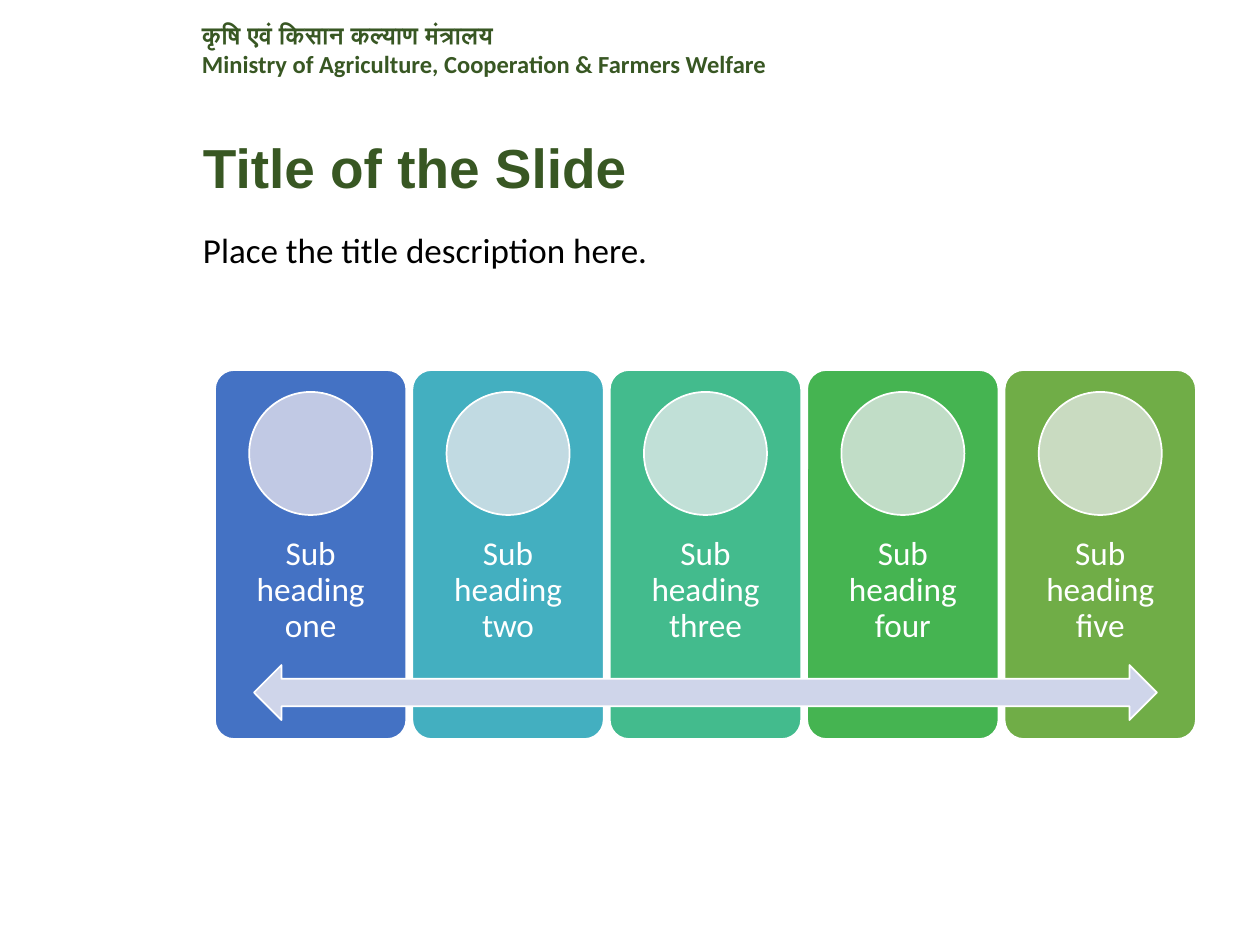
import pptx
import pptx.util
from pptx.dml.color import RGBColor
from pptx.enum.shapes import MSO_SHAPE
from pptx.enum.text import MSO_ANCHOR, PP_ALIGN

PX = 914400 / 126

DARK_GREEN = RGBColor(0x38, 0x57, 0x23)
BLACK = RGBColor(0, 0, 0)
WHITE = RGBColor(0xFF, 0xFF, 0xFF)
ARROW_FILL = RGBColor(0xCF, 0xD5, 0xEA)

# Heading, card colour, circle colour
CARDS = [
    ("Sub heading one", RGBColor(0x44, 0x72, 0xC4), RGBColor(0xC1, 0xC9, 0xE4)),
    ("Sub heading two", RGBColor(0x43, 0xAF, 0xC0), RGBColor(0xC1, 0xDA, 0xE2)),
    ("Sub heading three", RGBColor(0x43, 0xBB, 0x8D), RGBColor(0xC1, 0xE0, 0xD7)),
    ("Sub heading four", RGBColor(0x45, 0xB4, 0x51), RGBColor(0xC1, 0xDD, 0xC7)),
    ("Sub heading five", RGBColor(0x70, 0xAD, 0x47), RGBColor(0xC9, 0xDB, 0xC1)),
]


def emu(*lengths):
    return [round(length * PX) for length in lengths]


def add_text(slide, box, lines, *, size, color, font="Calibri", bold=False,
             align=PP_ALIGN.LEFT, anchor=MSO_ANCHOR.TOP, line_spacing=1.0,
             insets=(13, 6)):
    frame = slide.shapes.add_textbox(*emu(*box)).text_frame
    frame.word_wrap = True
    frame.vertical_anchor = anchor
    frame.margin_left = frame.margin_right = emu(insets[0])[0]
    frame.margin_top = frame.margin_bottom = emu(insets[1])[0]
    for index, line in enumerate(lines):
        paragraph = frame.add_paragraph() if index else frame.paragraphs[0]
        paragraph.alignment = align
        paragraph.line_spacing = line_spacing
        run = paragraph.add_run()
        run.text = line
        run.font.name = font
        run.font.size = pptx.util.Pt(size)
        run.font.bold = bold
        run.font.color.rgb = color


def add_outlined_shape(slide, kind, box, fill):
    shape = slide.shapes.add_shape(kind, *emu(*box))
    shape.shadow.inherit = False
    shape.fill.solid()
    shape.fill.fore_color.rgb = fill
    shape.line.color.rgb = WHITE
    shape.line.width = pptx.util.Pt(1)
    return shape


def add_header(slide, left, top, width):
    add_text(slide, (left, top, width, 102),
             ["कृषि एवं किसान कल्याण मंत्रालय",
              "Ministry of Agriculture, Cooperation & Farmers Welfare"],
             size=14, color=DARK_GREEN, bold=True)


def add_title(slide, left, top):
    add_text(slide, (left, top, 580, 59), ["Title of the Slide"], size=31.4,
             color=DARK_GREEN, font="Arial", bold=True, line_spacing=0.7)
    add_text(slide, (left, top + 81, 679, 47),
             ["Place the title description here."], size=20, color=BLACK,
             line_spacing=0.9)


def add_card(slide, left, top, width, height, heading, fill, circle_fill):
    card = add_outlined_shape(slide, MSO_SHAPE.ROUNDED_RECTANGLE,
                              (left, top, width, height), fill)
    card.adjustments[0] = 0.1
    add_text(slide, (left, top + 147, width, 147), [heading], size=19,
             color=WHITE, align=PP_ALIGN.CENTER, anchor=MSO_ANCHOR.MIDDLE,
             line_spacing=0.9, insets=(19, 19))
    diameter = 123
    add_outlined_shape(slide, MSO_SHAPE.OVAL,
                       (left + (width - diameter) / 2, top + 22, diameter, diameter),
                       circle_fill)


def add_card_row(slide, left, top, width, height):
    """Place equal cards side by side with a double arrow across their feet."""
    gap = 6
    card_width = (width - gap * (len(CARDS) - 1)) / len(CARDS)
    for index, card in enumerate(CARDS):
        add_card(slide, left + index * (card_width + gap), top, card_width, height, *card)
    arrow_inset = 39
    add_outlined_shape(slide, MSO_SHAPE.LEFT_RIGHT_ARROW,
                       (left + arrow_inset, top + 295, width - 2 * arrow_inset, 55),
                       ARROW_FILL)


def main():
    presentation = pptx.Presentation()
    presentation.slide_width, presentation.slide_height = emu(1260, 945)
    slide = presentation.slides.add_slide(presentation.slide_layouts[6])
    add_header(slide, 189, 14, 641)
    add_title(slide, 190, 146)
    add_card_row(slide, 215, 370, 981, 369)
    presentation.save("out.pptx")


if __name__ == "__main__":
    main()
